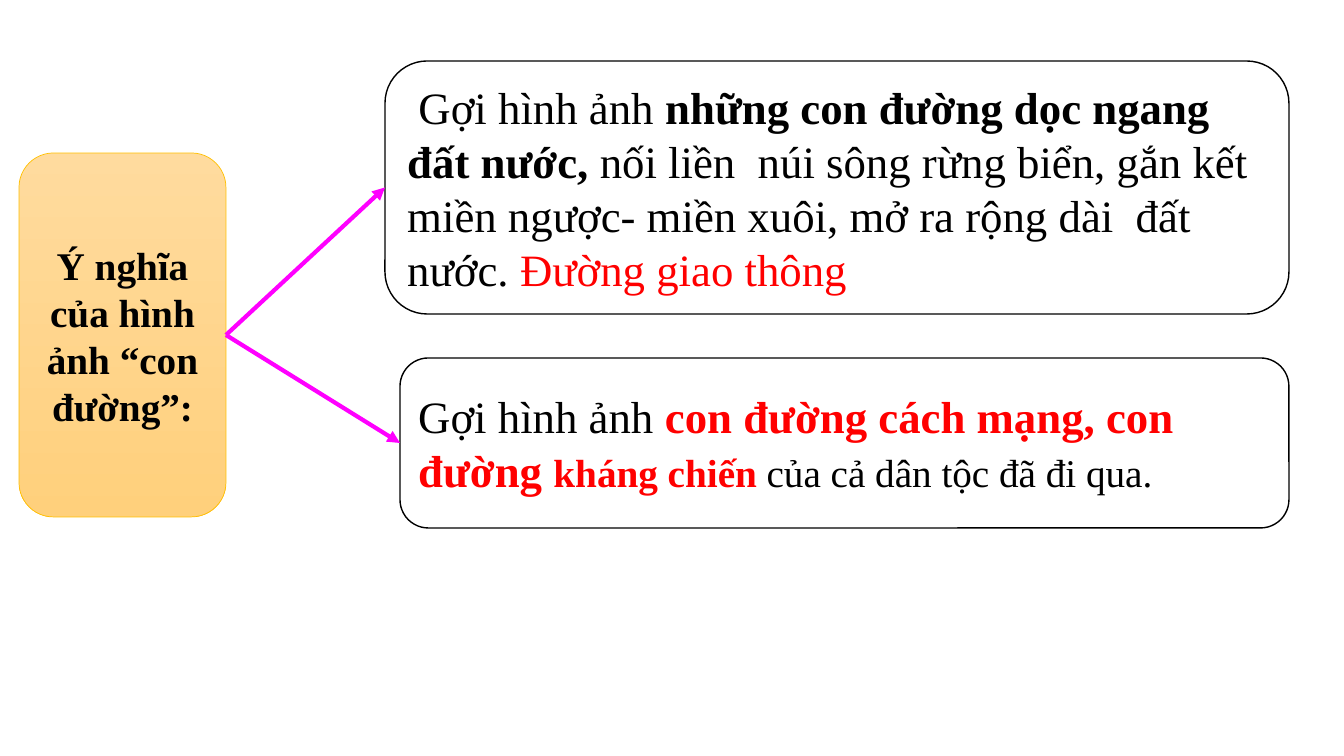
from dataclasses import dataclass

from lxml import etree
from pptx import Presentation
from pptx.dml.color import RGBColor
from pptx.enum.shapes import MSO_CONNECTOR, MSO_SHAPE
from pptx.enum.text import MSO_ANCHOR, PP_ALIGN
from pptx.oxml.ns import qn
from pptx.util import Pt

ROUNDED = MSO_SHAPE.ROUNDED_RECTANGLE
STRAIGHT = MSO_CONNECTOR.STRAIGHT
MIDDLE = MSO_ANCHOR.MIDDLE
LEFT, CENTER = PP_ALIGN.LEFT, PP_ALIGN.CENTER
EMU_PER_PX = 914400 / 100.8
LEFT_SITE, RIGHT_SITE = 1, 3


@dataclass(frozen=True)
class Theme:
    font: str = "Times New Roman"
    ink: str = "000000"
    paper: str = "FFFFFF"
    accent: str = "FF0000"
    arrow: str = "FF00FF"
    topic_line: str = "FFC000"
    topic_fill: tuple = ("FFDB9E", "FFD07C")
    small: int = 28
    large: int = 32


def px(length):
    return round(length * EMU_PER_PX)


def color(value):
    return RGBColor.from_string(value)


def add_text(para, text, *, font, size, ink, bold=False):
    span = para.add_run()
    span.text = text
    span.font.name = font
    span.font.size = Pt(size)
    span.font.bold = bold
    span.font.color.rgb = color(ink)


class SlideBuilder:
    def __init__(self, page, theme):
        self.page = page
        self.theme = theme

    def box(self, bounds, spans, *, fill, line, width=1, align=LEFT):
        box = self.page.shapes.add_shape(ROUNDED, *map(px, bounds))
        box.shadow.inherit = False
        if isinstance(fill, tuple):
            box.fill.gradient()
            box.fill.gradient_angle = 270
            for stop, shade in zip(box.fill.gradient_stops, fill):
                stop.color.rgb = color(shade)
        else:
            box.fill.solid()
            box.fill.fore_color.rgb = color(fill)
        box.line.color.rgb = color(line)
        box.line.width = Pt(width)
        frame = box.text_frame
        frame.word_wrap = True
        frame.vertical_anchor = MIDDLE
        para = frame.paragraphs[0]
        para.alignment = align
        for text, style in spans:
            settings = {"size": self.theme.large, "ink": self.theme.ink, **style}
            add_text(para, text, font=self.theme.font, **settings)
        return box

    def arrow(self, source, target):
        arrow = self.page.shapes.add_connector(STRAIGHT, 0, 0, 0, 0)
        arrow.begin_connect(source, RIGHT_SITE)
        arrow.end_connect(target, LEFT_SITE)
        arrow.line.color.rgb = color(self.theme.arrow)
        arrow.line.width = Pt(3)
        etree.SubElement(arrow.line._get_or_add_ln(), qn("a:tailEnd"), type="triangle")
        etree.SubElement(arrow._element.spPr, qn("a:effectLst"))


def main():
    deck = Presentation()
    deck.slide_width, deck.slide_height = px(1344), px(756)
    page = deck.slides.add_slide(deck.slide_layouts[6])
    theme = Theme()
    builder = SlideBuilder(page, theme)

    topic = builder.box(
        (19, 153, 207, 364),
        [("Ý nghĩa của hình ảnh “con đường”:", {"size": theme.small, "bold": True})],
        fill=theme.topic_fill, line=theme.topic_line, width=0.5, align=CENTER,
    )
    meanings = [
        ((385, 61, 904, 253), [
            (" Gợi hình ảnh ", {}),
            ("những con đường dọc ngang đất nước, ", {"bold": True}),
            ("nối liền  núi sông rừng biển, gắn kết miền ngược- miền xuôi, "
             "mở ra rộng dài  đất nước. ", {}),
            ("Đường giao thông", {"ink": theme.accent}),
        ]),
        ((400, 358, 889, 170), [
            ("Gợi hình ảnh ", {}),
            ("con đường cách mạng, con đường ", {"ink": theme.accent, "bold": True}),
            ("kháng chiến ", {"size": theme.small, "ink": theme.accent, "bold": True}),
            ("của cả dân tộc đã đi qua.", {"size": theme.small}),
        ]),
    ]
    meaning_boxes = [
        builder.box(bounds, spans, fill=theme.paper, line=theme.ink)
        for bounds, spans in meanings
    ]
    for meaning_box in meaning_boxes:
        builder.arrow(topic, meaning_box)

    deck.save("out.pptx")


if __name__ == "__main__":
    main()
